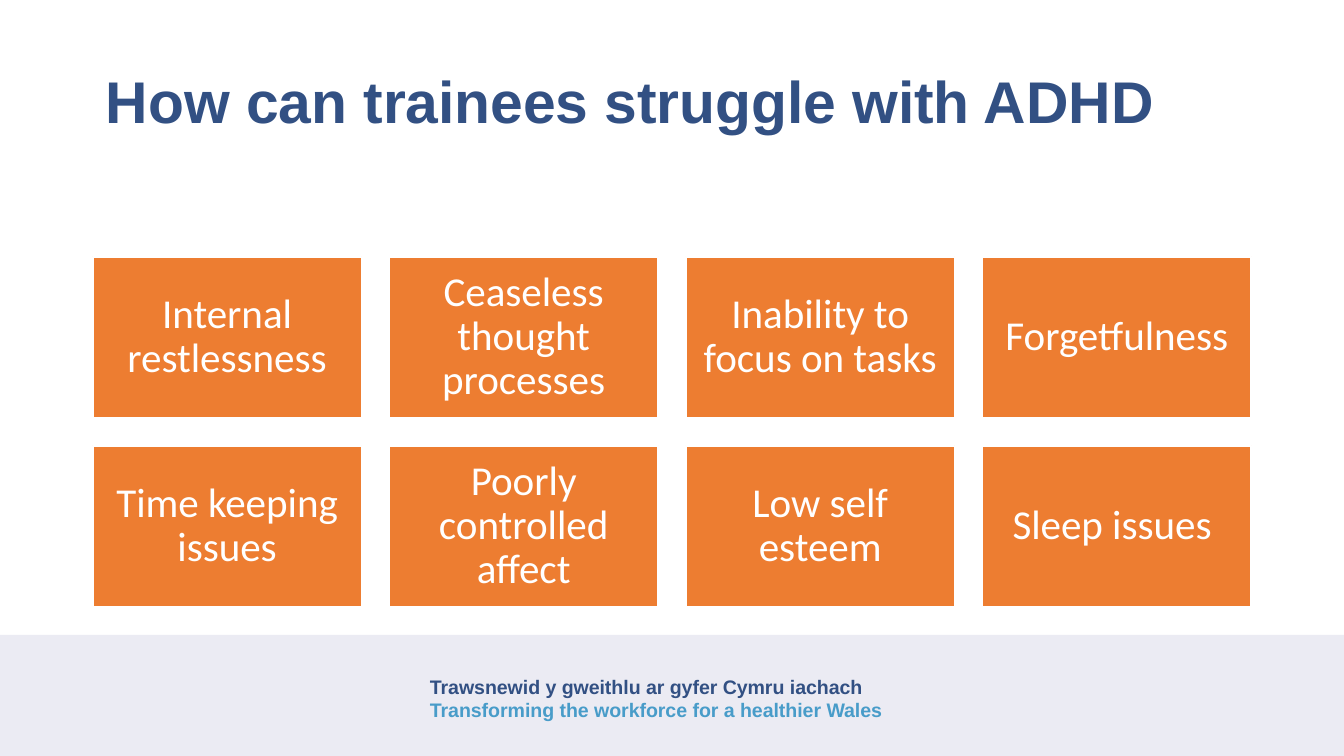
from pptx import Presentation
from pptx.dml.color import RGBColor
from pptx.enum.shapes import MSO_SHAPE as Shape
from pptx.enum.text import MSO_ANCHOR as Anchor, PP_ALIGN as Align
from pptx.util import Inches, Pt

NAVY = RGBColor(0x32, 0x50, 0x83)
SKY = RGBColor(0x48, 0x9C, 0xC9)
ORANGE = RGBColor(0xED, 0x7D, 0x31)
LAVENDER = RGBColor(0xEB, 0xEB, 0xF3)
WHITE = RGBColor(0xFF, 0xFF, 0xFF)

TITLE = "How can trainees struggle with ADHD"
STRUGGLES = [
    ["Internal restlessness", "Ceaseless thought processes",
     "Inability to focus on tasks", "Forgetfulness"],
    ["Time keeping issues", "Poorly controlled affect",
     "Low self esteem", "Sleep issues "],
]
MOTTO = [
    ("Trawsnewid y gweithlu ar gyfer Cymru iachach", NAVY),
    ("Transforming the workforce for a healthier Wales", SKY),
]

SLIDE_WIDTH = 10
SLIDE_HEIGHT = SLIDE_WIDTH * 9 / 16
LEFT, CONTENT_WIDTH = 0.69, 8.62
GRID_TOP, CARD_WIDTH, CARD_HEIGHT = 1.91, 2, 1.2
GAP = (CONTENT_WIDTH - 4 * CARD_WIDTH) / 3
FOOTER_HEIGHT = 0.9


def add_box(slide, left, top, width, height, fill):
    box = slide.shapes.add_shape(
        Shape.RECTANGLE, Inches(left), Inches(top), Inches(width), Inches(height))
    box.shadow.inherit = False
    box.fill.solid()
    box.fill.fore_color.rgb = fill
    box.line.fill.background()
    return box


def add_text(slide, left, top, width, height):
    frame = slide.shapes.add_textbox(
        Inches(left), Inches(top), Inches(width), Inches(height)).text_frame
    frame.word_wrap = True
    return frame


def style(paragraph, font_name, size, color, bold=False):
    for run in paragraph.runs:
        run.font.name = font_name
        run.font.size = Pt(size)
        run.font.bold = bold
        run.font.color.rgb = color


def add_card(slide, left, top, struggle):
    card = add_box(slide, left, top, CARD_WIDTH, CARD_HEIGHT, ORANGE)
    card.line.color.rgb = WHITE
    card.line.width = Pt(1)
    frame = card.text_frame
    frame.word_wrap = True
    frame.vertical_anchor = Anchor.MIDDLE
    frame.margin_left = frame.margin_right = Inches(0.09)
    frame.margin_top = frame.margin_bottom = Inches(0.09)
    frame.text = struggle
    label = frame.paragraphs[0]
    label.alignment = Align.CENTER
    label.line_spacing = 0.9
    style(label, "Calibri", 22, WHITE)


def main():
    deck = Presentation()
    deck.slide_width, deck.slide_height = Inches(SLIDE_WIDTH), Inches(SLIDE_HEIGHT)
    slide = deck.slides.add_slide(deck.slide_layouts[6])

    add_box(slide, 0, SLIDE_HEIGHT - FOOTER_HEIGHT, SLIDE_WIDTH, FOOTER_HEIGHT, LAVENDER)
    motto = add_text(slide, 3.1, 4.97, 3.75, 0.45)
    motto.text = "\n".join(line for line, _ in MOTTO)
    for paragraph, (_, color) in zip(motto.paragraphs, MOTTO):
        style(paragraph, "Arial", 10.5, color, bold=True)

    title = add_text(slide, LEFT, 0.23, CONTENT_WIDTH, 1.09)
    title.vertical_anchor = Anchor.MIDDLE
    title.text = TITLE
    title.paragraphs[0].line_spacing = 0.9
    style(title.paragraphs[0], "Arial", 31.5, NAVY, bold=True)

    for row, struggles in enumerate(STRUGGLES):
        for column, struggle in enumerate(struggles):
            add_card(slide, LEFT + column * (CARD_WIDTH + GAP),
                     GRID_TOP + row * (CARD_HEIGHT + GAP), struggle)

    deck.save("out.pptx")


if __name__ == "__main__":
    main()
